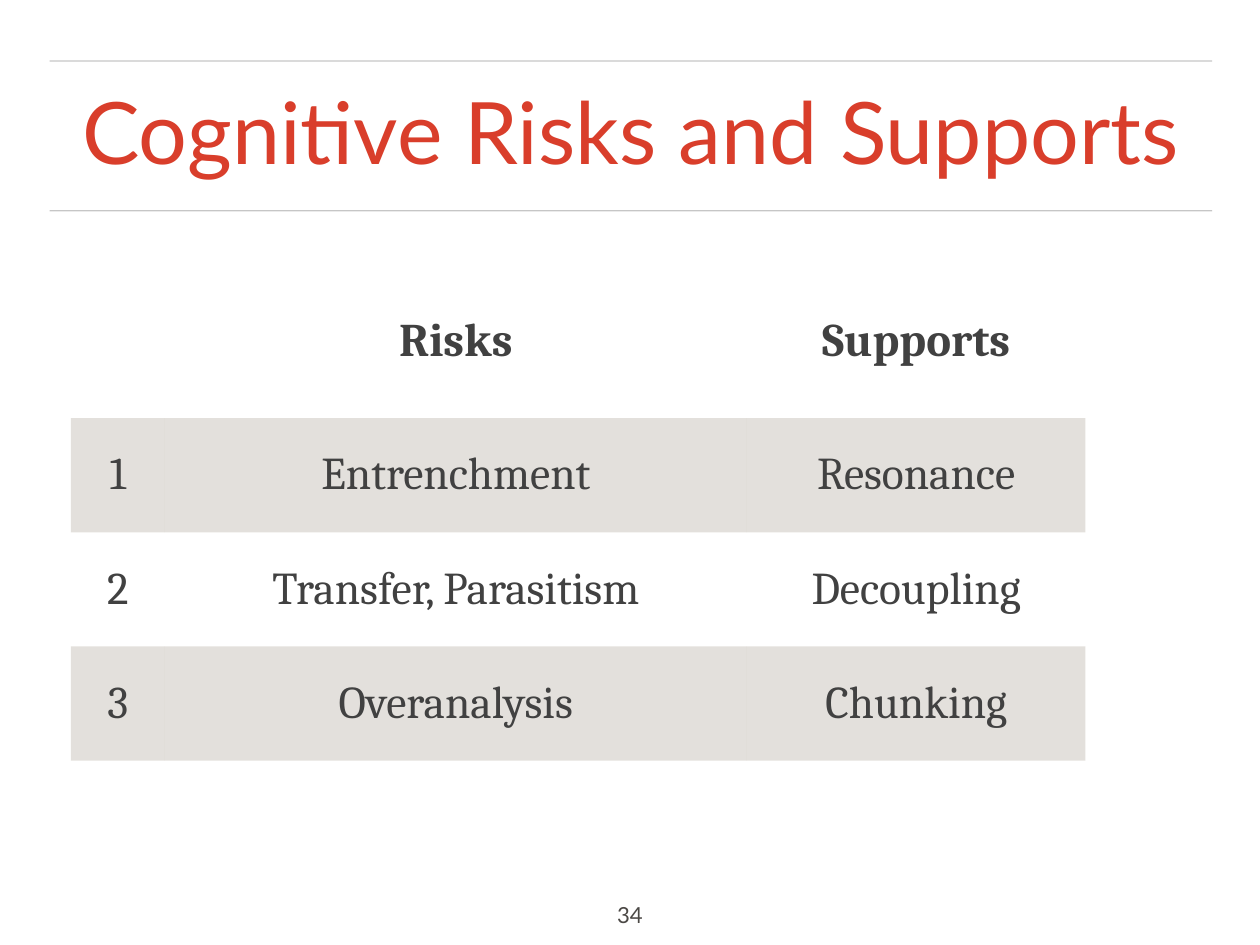
from dataclasses import dataclass

from lxml.etree import SubElement
from pptx import Presentation
from pptx.dml.color import RGBColor
from pptx.enum.shapes import MSO_CONNECTOR as Connector
from pptx.enum.text import MSO_ANCHOR as Anchor, MSO_AUTO_SIZE as AutoSize, PP_ALIGN as Align
from pptx.oxml.ns import qn
from pptx.util import Inches, Pt


@dataclass(frozen=True)
class Theme:
    title_color: str = "D93E2B"
    table_color: str = "414141"
    number_color: str = "4C4946"
    rule_color: str = "444444"
    band_color: str = "C9C3BA"
    sans: str = "Lato"
    serif: str = "Cambria"
    title_size: int = 70
    header_size: int = 38
    body_size: int = 37
    number_size: int = 18
    inset: float = 0.06
    plain_table: str = "{2D5ABB26-0587-4C30-8999-92F81FD0307C}"


theme = Theme()


def write(frame, text, font_name, size, color, bold=False):
    frame.text = text
    paragraph = frame.paragraphs[0]
    paragraph.alignment = Align.CENTER
    paragraph.space_before = Pt(0)
    for run in paragraph.runs:
        run.font.name = font_name
        run.font.size = Pt(size)
        run.font.bold = bold
        run.font.color.rgb = RGBColor.from_string(color)
    frame.margin_left = frame.margin_right = Inches(theme.inset)
    frame.margin_top = frame.margin_bottom = Inches(theme.inset)


def set_opacity(fill, color, percent):
    fill.solid()
    fill.fore_color.rgb = RGBColor.from_string(color)
    for tint in fill._xPr.iter(qn("a:srgbClr")):
        SubElement(tint, qn("a:alpha")).set("val", str(percent * 1000))


deck = Presentation()
deck.slide_width = Inches(14.22)
deck.slide_height = Inches(10.67)
slide = deck.slides.add_slide(deck.slide_layouts[5])

for rule_y in (2.38, 0.69):
    rule = slide.shapes.add_connector(
        Connector.STRAIGHT, Inches(0.56), Inches(rule_y), Inches(13.68), Inches(rule_y)
    )
    rule.line.width = Pt(1)
    set_opacity(rule.line.fill, theme.rule_color, 30)
    SubElement(rule._element.spPr, qn("a:effectLst"))

title = slide.shapes.title
title.left, title.top = Inches(0.56), Inches(0.88)
title.width, title.height = Inches(13.11), Inches(1.33)
write(title.text_frame, "Cognitive Risks and Supports", theme.sans, theme.title_size, theme.title_color)
title.text_frame.auto_size = AutoSize.NONE
title.text_frame.vertical_anchor = Anchor.MIDDLE
title.text_frame.paragraphs[0].line_spacing = 0.9

entries = [
    ("", "Risks", "Supports"),
    ("1", "Entrenchment", "Resonance"),
    ("2", "Transfer, Parasitism", "Decoupling"),
    ("3", "Overanalysis", "Chunking"),
]
risks_table = slide.shapes.add_table(
    len(entries), 3, Inches(0.8), Inches(2.99), Inches(11.45), Inches(5.6)
).table
risks_table.first_row = False
risks_table.horz_banding = False
risks_table._tbl.tblPr.find(qn("a:tableStyleId")).text = theme.plain_table

for column, width in zip(risks_table.columns, (1.06, 6.57, 3.82)):
    column.width = Inches(width)

for row_index, entry in enumerate(entries):
    is_header = row_index == 0
    risks_table.rows[row_index].height = Inches(1.73 if is_header else 1.29)
    size = theme.header_size if is_header else theme.body_size
    for column_index, text in enumerate(entry):
        cell = risks_table.cell(row_index, column_index)
        write(cell.text_frame, text, theme.serif, size, theme.table_color, is_header)
        cell.margin_left = cell.margin_right = Inches(theme.inset)
        cell.margin_top = cell.margin_bottom = Inches(theme.inset)
        cell.vertical_anchor = Anchor.MIDDLE
        if row_index % 2:
            set_opacity(cell.fill, theme.band_color, 50)
        else:
            cell.fill.background()

page_number = slide.shapes.add_textbox(Inches(6.81), Inches(10.12), Inches(0.6), Inches(0.44))
write(page_number.text_frame, "34", theme.sans, theme.number_size, theme.number_color)
page_number.text_frame.word_wrap = True
page_number.text_frame.auto_size = AutoSize.NONE

deck.save("out.pptx")
